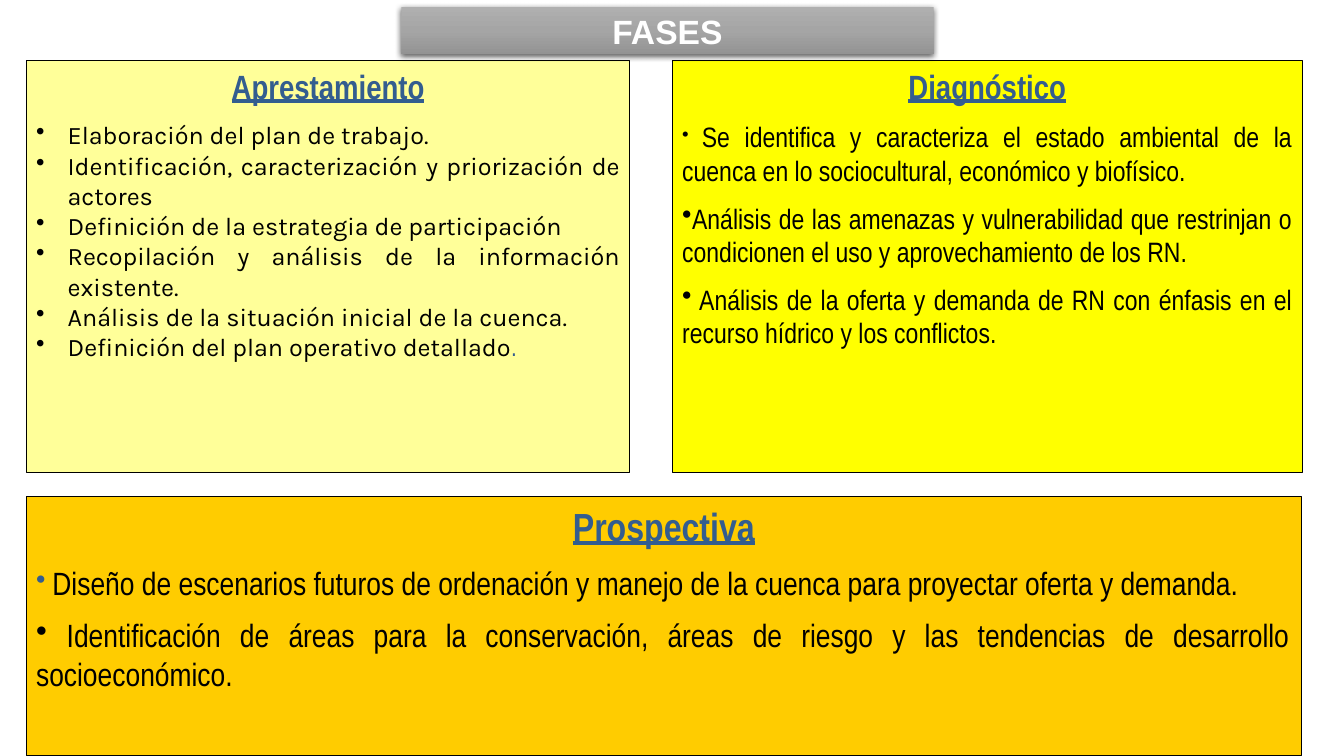
"""Build the slide on the phases of a watershed plan."""
from copy import deepcopy

from pptx import Presentation
from pptx.dml.color import RGBColor as RGB
from pptx.enum.shapes import MSO_SHAPE as SHAPE
from pptx.enum.text import MSO_ANCHOR as ANCHOR, PP_ALIGN as ALIGN
from pptx.oxml import parse_xml
from pptx.oxml.ns import nsdecls, qn
from pptx.oxml.xmlchemy import OxmlElement
from pptx.util import Pt

COLORS = {
    "cream": "FFFF99", "yellow": "FFFF00", "amber": "FFCC00",
    "blue": "335D8F", "black": "000000", "white": "FFFFFF",
    "gray_top": "AFAFAF", "gray_mid": "A5A5A5", "gray_base": "939393",
}
NARROW, BODY, HEADING = "Arial Narrow", "Karla", "Arial"


class PhaseSlide:
    def __init__(self, slide):
        self.slide = slide

    def color(self, name):
        return RGB.from_string(COLORS[name])

    def box(self, left, top, width, height):
        box = self.slide.shapes.add_shape(
            SHAPE.RECTANGLE, Pt(left), Pt(top), Pt(width), Pt(height))
        box.shadow.inherit = False
        box.text_frame.word_wrap = True
        return box

    def style(self, run, size, font, color, bold=False, underline=False):
        run.font.size = Pt(size)
        run.font.name = font
        run.font.bold = bold
        run.font.underline = underline
        run.font.color.rgb = self.color(color)

    def banner(self, title, *place):
        banner = self.box(*place)
        banner.line.fill.background()
        banner.fill.gradient()
        banner.fill.gradient_angle = 270
        gradient = banner._element.spPr.find(".//" + qn("a:gsLst"))
        gradient.insert(1, deepcopy(gradient[0]))
        shades = ("gray_top", "gray_mid", "gray_base")
        for stop, position, shade in zip(banner.fill.gradient_stops, (0, 0.5, 1), shades):
            stop.position = position
            stop.color.rgb = self.color(shade)
        banner._element.spPr.find(qn("a:effectLst")).append(parse_xml(
            f'<a:outerShdw {nsdecls("a")} blurRad="{Pt(4.5)}" dist="{Pt(1.5)}" '
            f'dir="5400000" rotWithShape="0"><a:srgbClr val="{COLORS["black"]}">'
            '<a:alpha val="63000"/></a:srgbClr></a:outerShdw>'))
        frame = banner.text_frame
        frame.vertical_anchor = ANCHOR.MIDDLE
        frame.text = title
        frame.paragraphs[0].alignment = ALIGN.CENTER
        self.style(frame.paragraphs[0].runs[0], 24, HEADING, "white", bold=True)

    def panel(self, title, title_size, fill, place, items, gap=10, indent=0):
        panel = self.box(*place)
        panel.fill.solid()
        panel.fill.fore_color.rgb = self.color(fill)
        panel.line.color.rgb = self.color("black")
        panel.line.width = Pt(0.75)
        frame = panel.text_frame
        frame.vertical_anchor = ANCHOR.TOP
        frame.text = title
        heading = frame.paragraphs[0]
        heading.alignment = ALIGN.CENTER
        heading.space_after = Pt(10)
        self.style(heading.runs[0], title_size, NARROW, "blue", bold=True, underline=True)
        for item in items:
            self.bullet(frame.add_paragraph(), item, gap, indent)

    def bullet(self, paragraph, parts, gap, indent):
        paragraph.alignment = ALIGN.JUSTIFY
        paragraph.space_after = Pt(gap)
        props = paragraph._p.get_or_add_pPr()
        props.set("marL", str(Pt(indent)))
        props.set("indent", str(-Pt(indent)))
        mark = OxmlElement("a:buChar")
        mark.set("char", "•")
        props.append(mark)
        for text, *look in parts:
            run = paragraph.add_run()
            run.text = text
            self.style(run, *look)


def main():
    deck = Presentation()
    deck.slide_width, deck.slide_height = Pt(960), Pt(540)
    phases = PhaseSlide(deck.slides.add_slide(deck.slide_layouts[6]))

    body = (18, BODY, "black")
    preparation = [[(task, *body)] for task in (
        "Elaboración del plan de trabajo.",
        "Identificación, caracterización y priorización de actores",
        "Definición de la estrategia de participación",
        "Recopilación y análisis de la información existente.",
        "Análisis de la situación inicial de la cuenca.",
        "Definición del plan operativo detallado",
    )]
    preparation[-1].append((".", 18, NARROW, "blue"))
    phases.panel("Aprestamiento", 24, "cream", (18.7, 43.2, 431.3, 294.5),
                 preparation, gap=0, indent=22.5)

    body = (20, NARROW, "black")
    diagnosis = [
        [(" ", 14, NARROW, "black"),
         ("Se identifica y caracteriza el estado ambiental de la cuenca "
          "en lo sociocultural, económico y biofísico.", *body)],
        [("Análisis de las amenazas y vulnerabilidad que restrinjan o "
          "condicionen el uso y aprovechamiento de los RN.", *body)],
        [(" Análisis de la oferta y demanda de RN con énfasis en el "
          "recurso hídrico y los conflictos.", *body)],
    ]
    phases.panel("Diagnóstico", 24, "yellow", (480.2, 43.2, 450, 294.5), diagnosis)

    body = (23, NARROW, "black")
    outlook = [
        [(" ", 20, NARROW, "blue"),
         ("Diseño de escenarios futuros de ordenación y manejo de la cuenca "
          "para proyectar oferta y demanda.", *body)],
        [(" Identificación de áreas para la conservación, áreas de riesgo y las "
          "tendencias de desarrollo socioeconómico.", *body)],
    ]
    phases.panel("Prospectiva", 28, "amber", (18.7, 355, 911, 185), outlook)

    phases.banner("FASES", 286.6, 5, 380.2, 33.8)
    deck.save("out.pptx")


if __name__ == "__main__":
    main()
